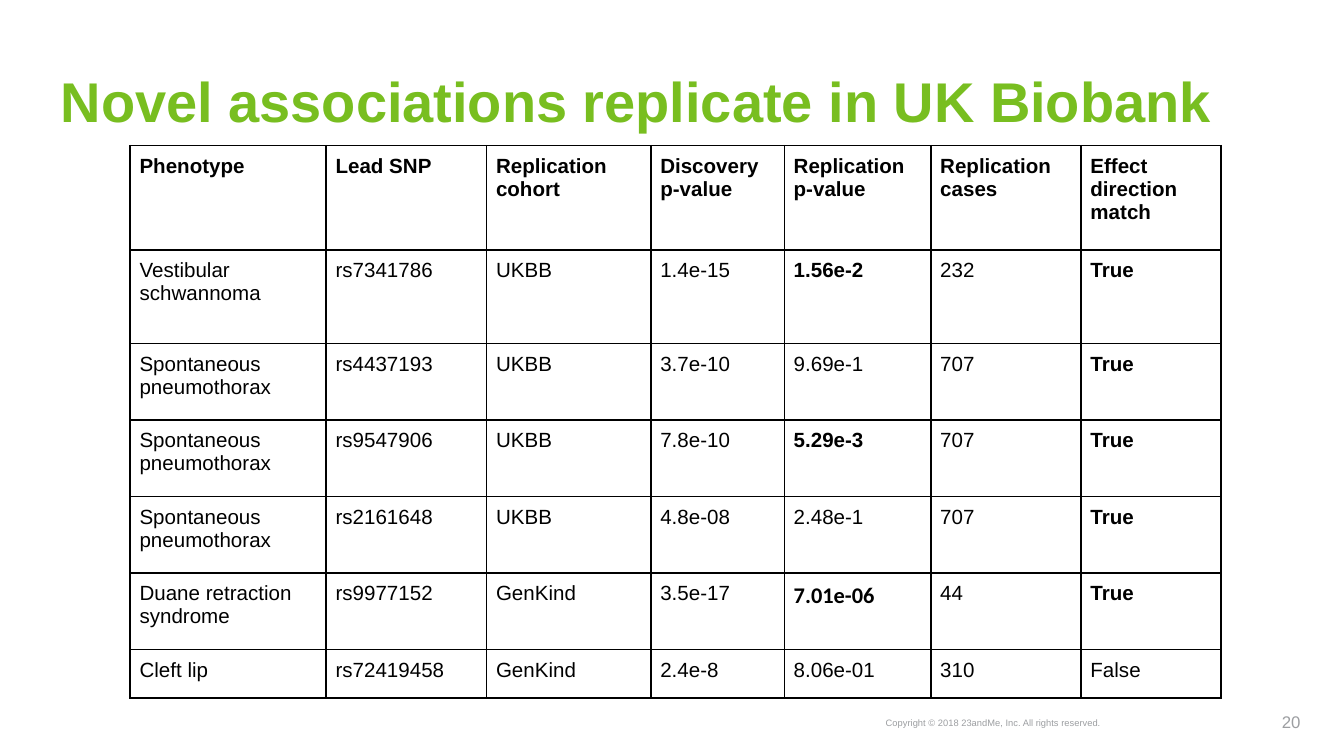
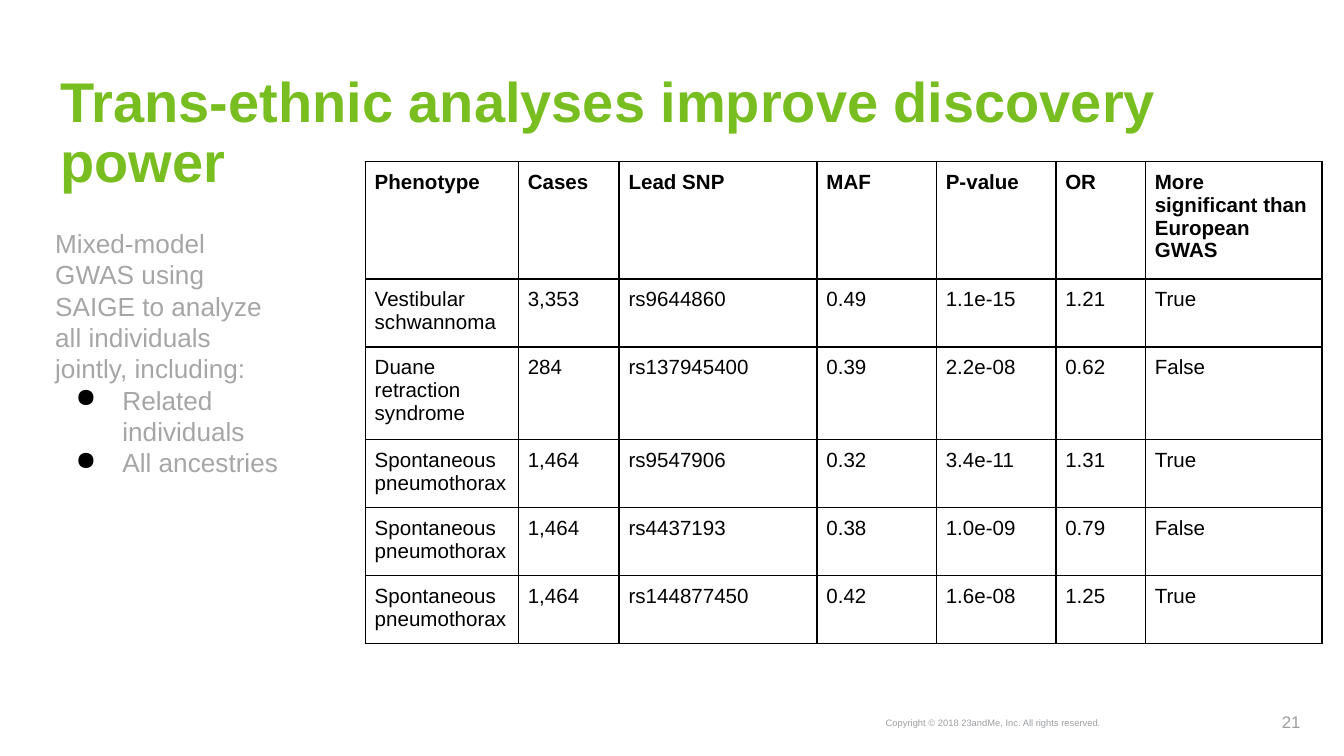
from lxml.etree import SubElement
from pptx import Presentation
from pptx.dml.color import RGBColor
from pptx.enum.text import MSO_ANCHOR, MSO_AUTO_SIZE, PP_ALIGN
from pptx.oxml.ns import qn
from pptx.util import Pt

GREEN = "78BE20"
BLACK = "000000"
FOOTER_GREY = "9C9EA1"
BODY_GREY = "A6A6A6"
FONT = "Arial"
COPYRIGHT = "Copyright © 2018 23andMe, Inc. All rights reserved."

REPLICATION_ROWS = [
    ["Phenotype", "Lead SNP", "Replication cohort", "Discovery p-value",
     "Replication p-value", "Replication cases", "Effect direction match"],
    ["Vestibular schwannoma", "rs7341786", "UKBB", "1.4e-15", "1.56e-2", "232", "True"],
    ["Spontaneous pneumothorax", "rs4437193", "UKBB", "3.7e-10", "9.69e-1", "707", "True"],
    ["Spontaneous pneumothorax", "rs9547906", "UKBB", "7.8e-10", "5.29e-3", "707", "True"],
    ["Spontaneous pneumothorax", "rs2161648", "UKBB", "4.8e-08", "2.48e-1", "707", "True"],
    ["Duane retraction syndrome", "rs9977152", "GenKind", "3.5e-17", "7.01e-06", "44", "True"],
    ["Cleft lip", "rs72419458", "GenKind", "2.4e-8", "8.06e-01", "310", "False"],
]
REPLICATED = {"1.56e-2", "5.29e-3", "7.01e-06", "True"}

ANCESTRY_ROWS = [
    ["Phenotype", "Cases", "Lead SNP", "MAF", "P-value", "OR",
     "More significant than European GWAS"],
    ["Vestibular schwannoma", "3,353", "rs9644860", "0.49", "1.1e-15", "1.21", "True"],
    ["Duane retraction syndrome", "284", "rs137945400", "0.39", "2.2e-08", "0.62", "False"],
    ["Spontaneous pneumothorax", "1,464", "rs9547906", "0.32", "3.4e-11", "1.31", "True"],
    ["Spontaneous pneumothorax", "1,464", "rs4437193", "0.38", "1.0e-09", "0.79", "False"],
    ["Spontaneous pneumothorax", "1,464", "rs144877450", "0.42", "1.6e-08", "1.25", "True"],
]


def color(value):
    return RGBColor.from_string(value)


def style(paragraph, size, fill, bold=False, name=FONT):
    font = paragraph.font
    font.name = name
    font.size = Pt(size)
    font.bold = bold
    font.color.rgb = color(fill)


def set_margins(holder, margin):
    holder.margin_left = holder.margin_right = Pt(margin)
    holder.margin_top = holder.margin_bottom = Pt(margin)


def add_box(page, left, top, width, height, margin):
    box = page.shapes.add_textbox(Pt(left), Pt(top), Pt(width), Pt(height))
    frame = box.text_frame
    frame.word_wrap = True
    set_margins(frame, margin)
    return frame


def add_footer_text(page, text, left, top, width, height, size):
    frame = add_box(page, left, top, width, height, 3)
    frame.vertical_anchor = MSO_ANCHOR.MIDDLE
    paragraph = frame.paragraphs[0]
    paragraph.text = text
    paragraph.alignment = PP_ALIGN.CENTER
    style(paragraph, size, FOOTER_GREY)


def add_page(deck, title, number):
    page = deck.slides.add_slide(deck.slide_layouts[5])
    heading = page.shapes.title
    heading.left, heading.top = Pt(27.5), Pt(34.5)
    heading.width, heading.height = Pt(643.5), Pt(42)
    frame = heading.text_frame
    frame.word_wrap = True
    frame.auto_size = MSO_AUTO_SIZE.NONE
    frame.vertical_anchor = MSO_ANCHOR.TOP
    set_margins(frame, 5)
    paragraph = frame.paragraphs[0]
    paragraph.text = title
    paragraph.alignment = PP_ALIGN.LEFT
    paragraph.line_spacing = 0.9
    style(paragraph, 30, GREEN, bold=True)
    add_footer_text(page, str(number), 683.5, 378.5, 16.5, 16.5, 9)
    add_footer_text(page, COPYRIGHT, 468.5, 381.5, 127.5, 11.5, 5)
    return page


def add_borders(cell):
    properties = cell._tc.get_or_add_tcPr()
    for side in ("a:lnL", "a:lnR", "a:lnT", "a:lnB"):
        line = SubElement(properties, qn(side), w=str(Pt(1)))
        fill = SubElement(line, qn("a:solidFill"))
        SubElement(fill, qn("a:srgbClr"), val=BLACK)


def add_grid(page, rows, left, top, widths, heights, bold_values=()):
    frame = page.shapes.add_table(len(rows), len(widths), Pt(left), Pt(top),
                                  Pt(sum(widths)), Pt(sum(heights)))
    table = frame.table
    table.horz_banding = False
    for column, width in zip(table.columns, widths):
        column.width = Pt(width)
    for row, height in zip(table.rows, heights):
        row.height = Pt(height)
    for row_index, values in enumerate(rows):
        for column_index, value in enumerate(values):
            cell = table.cell(row_index, column_index)
            set_margins(cell, 5)
            add_borders(cell)
            cell.fill.background()
            paragraph = cell.text_frame.paragraphs[0]
            paragraph.text = value
            style(paragraph, 11, BLACK, row_index == 0 or value in bold_values)
    return table


def add_bullet(paragraph):
    properties = paragraph._p.get_or_add_pPr()
    properties.set("marL", str(Pt(36)))
    properties.set("indent", str(Pt(-25)))
    bullet_color = SubElement(properties, qn("a:buClr"))
    SubElement(bullet_color, qn("a:srgbClr"), val=BLACK)
    SubElement(properties, qn("a:buChar"), char="●")


def add_notes_box(page, intro, bullets):
    frame = add_box(page, 22.5, 114.5, 136, 150.5, 7.2)
    frame.auto_size = MSO_AUTO_SIZE.SHAPE_TO_FIT_TEXT
    paragraph = frame.paragraphs[0]
    paragraph.text = intro
    style(paragraph, 14, BODY_GREY)
    for text in bullets:
        paragraph = frame.add_paragraph()
        paragraph.text = text
        add_bullet(paragraph)
        style(paragraph, 14, BODY_GREY)


def build_replication(deck):
    page = add_page(deck, "Novel associations replicate in UK Biobank", 20)
    table = add_grid(page, REPLICATION_ROWS, 69.75, 78,
                     [105, 86, 88, 71.5, 78.5, 80.5, 75],
                     [56, 50, 41, 41, 41, 41, 26], REPLICATED)
    duane_p_value = table.cell(5, 4).text_frame.paragraphs[0]
    style(duane_p_value, 12, BLACK, bold=True, name="Calibri")


def build_ancestry(deck):
    page = add_page(deck, "Trans-ethnic analyses improve discovery power", 21)
    line_counts = [4, 2, 3, 2, 2, 2]
    add_grid(page, ANCESTRY_ROWS, 195.75, 86.5,
             [82, 54, 106, 64, 64, 48, 94.5],
             [10 + 12.25 * count for count in line_counts])
    add_notes_box(
        page,
        "Mixed-model GWAS using SAIGE to analyze all individuals jointly, including:",
        ["Related individuals", "All ancestries"])


def main():
    deck = Presentation()
    deck.slide_width, deck.slide_height = Pt(720), Pt(405)
    build_replication(deck)
    build_ancestry(deck)
    deck.save("out.pptx")


if __name__ == "__main__":
    main()
